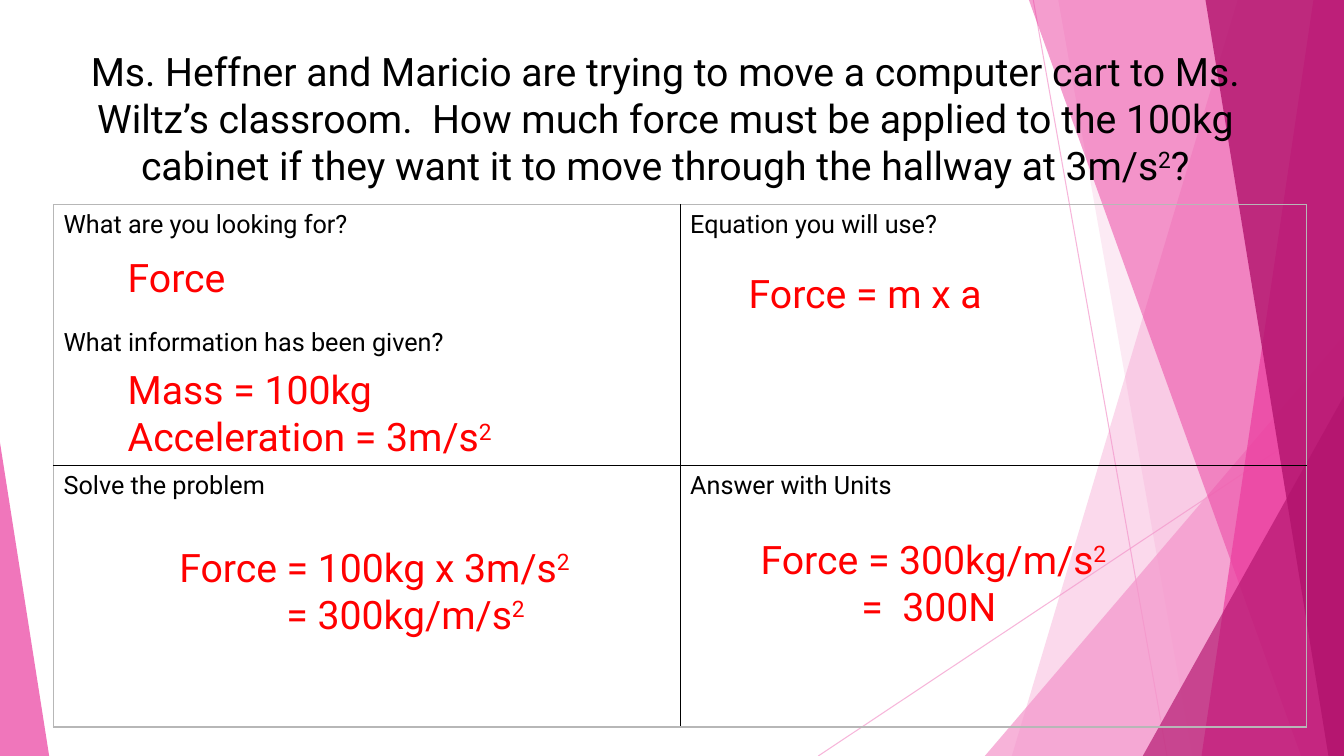
from dataclasses import dataclass

import pptx
import pptx.dml.color
import pptx.enum.shapes
import pptx.enum.text
import pptx.oxml
import pptx.oxml.ns
import pptx.util
from lxml import etree

Cm = pptx.util.Cm
Pt = pptx.util.Pt
qn = pptx.oxml.ns.qn

WIDE, HIGH = 33.87, 19.05
FONT = "Roboto"
COLORS = {
    "rose": "F496CB",
    "pink": "EB3D9F",
    "plum": "B2136D",
    "black": "000000",
    "red": "FF0000",
    "grey": "B7B7B7",
}


@dataclass
class Ray:
    start: tuple[float, float]
    end: tuple[float, float]


@dataclass
class Band:
    """Panel from a slanted left side to the right slide edge."""
    top: float
    foot: float
    color: str
    alpha: int


@dataclass
class Wedge:
    """Triangle that stands on the bottom slide edge."""
    left: float
    top: float
    width: float
    peak: float
    color: str
    alpha: int


@dataclass
class Run:
    text: str
    sup: bool = False


@dataclass
class Line:
    runs: list[Run]
    indent: float = 0
    before: float = 0


@dataclass
class Note:
    left: float
    top: float
    width: float
    height: float
    lines: list[Line]
    color: str = "red"
    align: pptx.enum.text.PP_ALIGN = pptx.enum.text.PP_ALIGN.LEFT


TWO = Run("2", True)

RAYS = [Ray((26.04, 0), (29.41, HIGH)), Ray((WIDE, 10.24), (20.62, HIGH))]

DECOR = [
    Band(31.19, 25.5, "rose", 36),
    Band(26.67, 30.05, "rose", 20),
    Wedge(24.82, 8.46, 9.05, 1, "rose", 72),
    Band(25.93, 32.79, "pink", 50),
    Band(33.1, 30.28, "pink", 70),
    Band(30.38, 33.48, "plum", 80),
    Wedge(28.8, 9.98, 5.07, 1, "plum", 66),
    Wedge(0, 11.15, 1.24, 0, "pink", 70),
]

TITLE = Note(1.12, 1.07, 31.29, 3.84, [Line([
    Run("Ms. Heffner and Maricio are trying to move a computer cart to Ms. "
        "Wiltz’s classroom.  How much force must be applied to the 100kg "
        "cabinet if they want it to move through the hallway at 3m/s"),
    TWO, Run("?")])], "black", pptx.enum.text.PP_ALIGN.CENTER)

GRID = [
    [[Line([Run("What are you looking for?")]),
      Line([Run("What information has been given?")], before=63.3)],
     [Line([Run("Equation you will use?")])]],
    [[Line([Run("Solve the problem")])],
     [Line([Run("Answer with Units")])]],
]

NOTES = [
    Note(18.62, 6.65, 13.79, 1.45, [Line([Run("Force = m x a")])]),
    Note(2.97, 6.27, 13.79, 1.45, [Line([Run("Force")])]),
    Note(2.97, 9.09, 13.79, 2.64, [
        Line([Run("Mass = 100kg")]),
        Line([Run("Acceleration = 3m/s"), TWO])]),
    Note(4.27, 13.56, 13.79, 2.64, [
        Line([Run("Force = 100kg x 3m/s"), TWO]),
        Line([Run("= 300kg/m/s"), TWO], indent=2.7)]),
    Note(18.92, 13.36, 13.79, 2.64, [
        Line([Run("Force = 300kg/m/s"), TWO]),
        Line([Run("=  300N")], indent=2.54)]),
]


def tint(name: str) -> pptx.dml.color.RGBColor:
    return pptx.dml.color.RGBColor.from_string(COLORS[name])


def fade(shape, alpha: int) -> None:
    """Set the opacity, in percent, of the first colour of a shape."""
    color = next(shape._element.spPr.iter(qn("a:srgbClr")))
    etree.SubElement(color, qn("a:alpha")).set("val", str(alpha * 1000))


def draw_ray(shapes, ray: Ray) -> None:
    ends = [Cm(v) for v in ray.start + ray.end]
    line = shapes.add_connector(pptx.enum.shapes.MSO_CONNECTOR.STRAIGHT, *ends)
    line.line.color.rgb = tint("rose")
    line.line.width = Pt(0.75)
    fade(line, 70)
    etree.SubElement(line._element.spPr, qn("a:effectLst"))


def draw_decor(shapes, part: Band | Wedge) -> None:
    if isinstance(part, Band):
        pen = shapes.build_freeform(Cm(part.top), Cm(0))
        pen.add_line_segments([(Cm(x), Cm(y)) for x, y in (
            (WIDE, 0), (WIDE, HIGH), (part.foot, HIGH))])
        shape = pen.convert_to_shape()
    else:
        shape = shapes.add_shape(
            pptx.enum.shapes.MSO_SHAPE.ISOSCELES_TRIANGLE, Cm(part.left),
            Cm(part.top), Cm(part.width), Cm(HIGH - part.top))
        shape.adjustments[0] = part.peak
    shape.shadow.inherit = False
    shape.line.fill.background()
    shape.fill.solid()
    shape.fill.fore_color.rgb = tint(part.color)
    fade(shape, part.alpha)


def write(frame, lines: list[Line], size: float, color: str, align) -> None:
    for i, line in enumerate(lines):
        para = frame.add_paragraph() if i else frame.paragraphs[0]
        para.alignment = align
        para.space_before = Pt(line.before)
        if line.indent:
            para._p.get_or_add_pPr().set("marL", str(Cm(line.indent)))
        for part in line.runs:
            run = para.add_run()
            run.text = part.text
            run.font.name = FONT
            run.font.size = Pt(size)
            run.font.color.rgb = tint(color)
            if part.sup:
                run._r.get_or_add_rPr().set("baseline", "30000")


def draw_note(shapes, note: Note) -> None:
    box = shapes.add_textbox(
        Cm(note.left), Cm(note.top), Cm(note.width), Cm(note.height))
    frame = box.text_frame
    frame.word_wrap = True
    frame.auto_size = pptx.enum.text.MSO_AUTO_SIZE.SHAPE_TO_FIT_TEXT
    write(frame, note.lines, 28, note.color, note.align)


def edge(cell, side: str, color: str) -> None:
    rule = etree.SubElement(
        cell._tc.get_or_add_tcPr(), qn(f"a:ln{side}"), w=str(Pt(1)))
    fill = etree.SubElement(rule, qn("a:solidFill"))
    etree.SubElement(fill, qn("a:srgbClr")).set("val", COLORS[color])


def draw_grid(shapes) -> None:
    table = shapes.add_table(
        2, 2, Cm(1.35), Cm(5.16), Cm(31.58), Cm(13.16)).table
    table.first_row = table.horz_banding = False
    for r, row in enumerate(GRID):
        for c, lines in enumerate(row):
            cell = table.cell(r, c)
            inner = {"L": c == 1, "R": c == 0, "T": r == 1, "B": r == 0}
            for side, inside in inner.items():
                edge(cell, side, "black" if inside else "grey")
            cell.fill.background()
            write(cell.text_frame, lines, 18, "black",
                  pptx.enum.text.PP_ALIGN.LEFT)


def main() -> None:
    deck = pptx.Presentation()
    deck.slide_width, deck.slide_height = Cm(WIDE), Cm(HIGH)
    shapes = deck.slides.add_slide(deck.slide_layouts[6]).shapes
    for ray in RAYS:
        draw_ray(shapes, ray)
    for part in DECOR:
        draw_decor(shapes, part)
    draw_note(shapes, TITLE)
    draw_grid(shapes)
    for note in NOTES:
        draw_note(shapes, note)
    deck.save("out.pptx")


if __name__ == "__main__":
    main()
